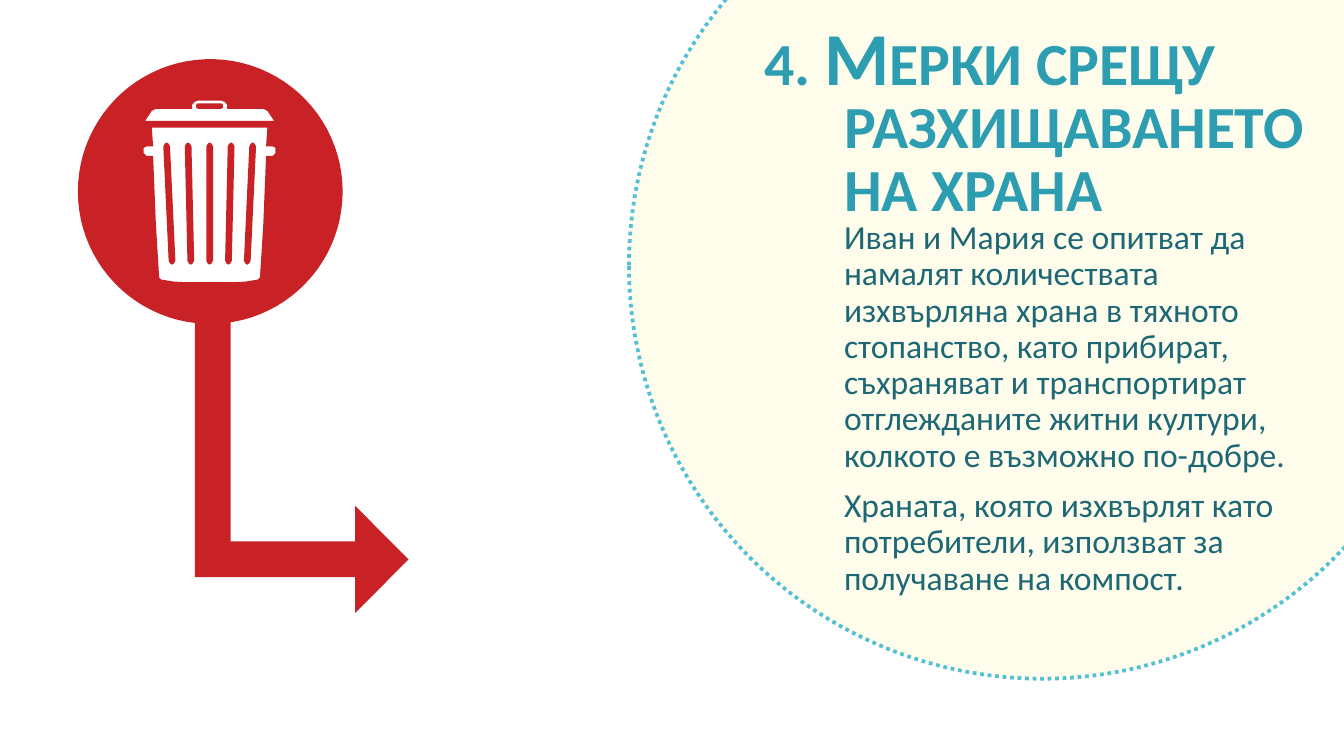
from dataclasses import dataclass
from math import cos, radians, sin

from lxml.etree import SubElement
from pptx import Presentation
from pptx.dml.color import RGBColor
from pptx.enum.dml import MSO_LINE
from pptx.enum.shapes import MSO_SHAPE
from pptx.enum.text import MSO_ANCHOR, MSO_AUTO_SIZE, PP_ALIGN
from pptx.oxml.ns import qn
from pptx.slide import Slide
from pptx.util import Pt

EMU_PER_PX = 4572
RED = RGBColor(0xC8, 0x22, 0x26)
CREAM = RGBColor(0xFE, 0xFD, 0xE6)
AQUA = RGBColor(0x54, 0xC0, 0xD4)
TITLE_TEAL = RGBColor(0x2D, 0x9D, 0xB1)
BODY_TEAL = RGBColor(0x1E, 0x68, 0x76)

AXIS = 312
TITLE = "4. Мерки срещу разхищаването на храна"
BODY = [
    "Иван и Мария се опитват да намалят количествата изхвърляна храна в тяхното "
    "стопанство, като прибират, съхраняват и транспортират отглежданите житни "
    "култури, колкото е възможно по-добре.",
    "Храната, която изхвърлят като потребители, използват за получаване на компост.",
]
BIN_LEFT = [
    (226, 190), (228, 218), (218, 218), (214, 220), (214, 228), (218, 232), (228, 232),
    (232, 332), (237, 413), (240, 416), (258, 419), (278, 420), (310, 420),
]
LID_LEFT = [
    (216, 180), (224, 168), (226, 165), (232, 162), (286, 162), (286, 156), (289, 152),
    (294, 150),
]


def px(length):
    return round(length * EMU_PER_PX)


def set_all(target, values):
    for name, value in values.items():
        setattr(target, name, value)


def mirrored(left_half):
    return left_half + [(2 * AXIS - x, y) for x, y in reversed(left_half)]


def circle(center_x, center_y, radius):
    angles = [radians(degree) for degree in range(0, 360, 4)]
    return [(center_x + radius * cos(a), center_y + radius * sin(a)) for a in angles]


def slat(top_x, bottom_x):
    top = [(-5, 218), (-3, 214), (0, 212), (3, 214), (5, 218)]
    bottom = [(5, 388), (3, 392), (0, 394), (-3, 392), (-5, 388)]
    return [(top_x + x, y) for x, y in top] + [(bottom_x + x, y) for x, y in bottom]


@dataclass
class SlideBuilder:
    """Hold the text style and the current slide, and add elements to it."""

    slide: Slide
    font_name: str = "Calibri"

    def paint(self, shape, color):
        shape.shadow.inherit = False
        shape.fill.solid()
        shape.fill.fore_color.rgb = color
        shape.line.fill.background()
        return shape

    def preset(self, kind, left, top, width, height, color):
        frame = map(px, (left, top, width, height))
        return self.paint(self.slide.shapes.add_shape(kind, *frame), color)

    def outline(self, contours, color):
        points = [[(px(x), px(y)) for x, y in contour] for contour in contours]
        builder = self.slide.shapes.build_freeform(*points[0][0], scale=1.0)
        builder.add_line_segments(points[0][1:], close=True)
        for contour in points[1:]:
            builder.move_to(*contour[0])
            builder.add_line_segments(contour[1:], close=True)
        return self.paint(builder.convert_to_shape(), color)

    def text(self, placeholder, frame, texts, anchor, hanging, spacing, font, color):
        names = ("left", "top", "width", "height")
        set_all(placeholder, dict(zip(names, map(px, frame))))
        text_frame = placeholder.text_frame
        text_frame.text = "\n".join(texts)
        set_all(text_frame, {
            "word_wrap": True,
            "auto_size": MSO_AUTO_SIZE.NONE,
            "vertical_anchor": anchor,
        })
        for index, paragraph in enumerate(text_frame.paragraphs):
            set_all(paragraph, {
                "alignment": PP_ALIGN.LEFT,
                "line_spacing": spacing,
                "space_before": Pt(7.5 if index else 0),
            })
            properties = paragraph._p.get_or_add_pPr()
            properties.set("marL", str(px(hanging)))
            properties.set("indent", str(-px(hanging)))
            SubElement(properties, qn("a:buNone"))
            for run in paragraph.runs:
                set_all(run.font, {"name": self.font_name, **font})
                run.font.color.rgb = color
        return text_frame


def main():
    presentation = Presentation()
    set_all(presentation, {"slide_width": px(2000), "slide_height": px(1125)})
    slide = presentation.slides.add_slide(presentation.slide_layouts[1])
    builder = SlideBuilder(slide)

    arrow = builder.preset(MSO_SHAPE.BENT_UP_ARROW, 218, 522, 462, 318, RED)
    arrow.rotation = 90
    arrow.adjustments[0] = 0.167

    backdrop = builder.preset(MSO_SHAPE.OVAL, 936, -220, 1230, 1230, CREAM)
    cream = backdrop.element.spPr.find(qn("a:solidFill"))[0]
    SubElement(cream, qn("a:alpha")).set("val", "75000")
    backdrop.line.color.rgb = AQUA
    set_all(backdrop.line, {"width": Pt(2), "dash_style": MSO_LINE.ROUND_DOT})

    title, body = slide.placeholders
    for placeholder in (title, body):
        slide.shapes._spTree.append(placeholder.element)
    title_frame = builder.text(
        title, (1118, 84, 922, 218), [TITLE], MSO_ANCHOR.MIDDLE, 118, 0.7,
        {"size": Pt(40), "bold": True}, TITLE_TEAL,
    )
    title_frame.paragraphs[0].runs[0].font._element.set("cap", "small")
    builder.text(
        body, (1236, 318, 706, 714), BODY, MSO_ANCHOR.TOP, 0, 0.9,
        {"size": Pt(18)}, BODY_TEAL,
    )

    badge = [circle(313, 285, 197), mirrored(BIN_LEFT), mirrored(LID_LEFT)]
    builder.outline(badge, RED)
    for step in range(-2, 3):
        builder.outline([slat(AXIS + 32 * step, AXIS + 28 * step)], RED)
    handle = builder.preset(MSO_SHAPE.ROUNDED_RECTANGLE, 292, 154, 40, 8, RED)
    handle.adjustments[0] = 0.4

    presentation.save("out.pptx")


if __name__ == "__main__":
    main()
